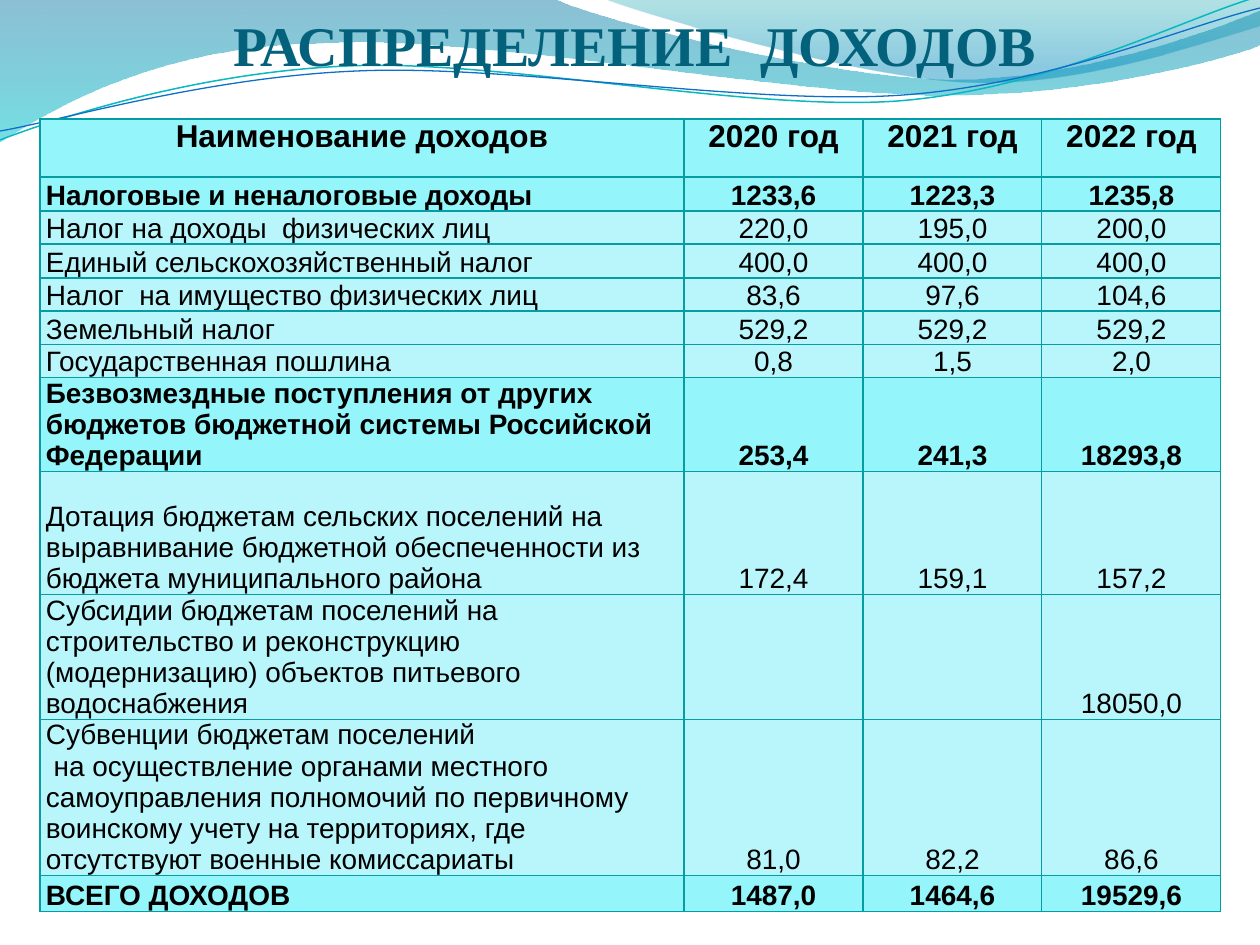
from math import cos, radians, sin

from lxml.etree import SubElement
from pptx import Presentation
from pptx.dml.color import RGBColor
from pptx.enum.text import MSO_ANCHOR, PP_ALIGN
from pptx.oxml.ns import qn
from pptx.util import Emu, Pt

TEAL_DARK = RGBColor(0x04, 0x61, 0x7B)
BLACK = RGBColor(0x00, 0x00, 0x00)
BORDER = RGBColor(0x06, 0x9C, 0xA3)
ROW_STRONG = RGBColor(0x94, 0xF5, 0xFA)
ROW_LIGHT = RGBColor(0xB9, 0xF6, 0xFB)
WAVE_BLUE = RGBColor(0x00, 0x74, 0xA1)
WAVE_CYAN = RGBColor(0x00, 0xC6, 0xCF)
WAVE_TEAL = RGBColor(0x00, 0xA1, 0xA9)
WAVE_SKY = RGBColor(0x00, 0x8B, 0xBF)
LINE_TEAL = RGBColor(0x0A, 0xB8, 0xBF)
LINE_BLUE = RGBColor(0x0F, 0x6F, 0xC6)

# Outlines in px: two numbers are a corner, six are a Bezier segment
LEFT_WAVE = [
    (0, 0), (554, -1), (600, 21, 837, 79, 955, 79), (1075, 79, 1207, 33, 1260, 11),
    (1261, 45), (1239, 55, 1096, 96, 940, 95), (784, 95, 481, 35, 324, 43),
    (163, 45, 58, 105, -1, 142)]
RIGHT_WAVE = [
    (604, -1), (641, 14, 859, 78, 969, 82), (1079, 87, 1211, 40, 1260, 26), (1260, 0)]
TEAL_CURVE = [
    (0, 140), (60, 117, 199, 72, 349, 66), (498, 59, 747, 112, 898, 101),
    (1050, 89, 1182, 19, 1257, -3)]
BLUE_CURVE = [
    (0, 131), (59, 121, 207, 77, 357, 71), (508, 64, 752, 106, 903, 95),
    (1053, 84, 1185, 26, 1260, 8)]
CURVE_TILT = -2.7
CURVE_CENTRE = (629, 73)

COLUMNS = [644, 179, 179, 179]
HEIGHTS = [58] + [34, 33] * 3 + [94, 123, 123, 156, 36]
STRONG_ROWS = {0, 1, 7, 11}
INCOME = [
    ("Наименование доходов", "2020 год", "2021 год", "2022 год"),
    ("Налоговые и неналоговые доходы", "1233,6", "1223,3", "1235,8"),
    ("Налог на доходы  физических лиц", "220,0", "195,0", "200,0"),
    ("Единый сельскохозяйственный налог", "400,0", "400,0", "400,0"),
    ("Налог  на имущество физических лиц", "83,6", "97,6", "104,6"),
    ("Земельный налог", "529,2", "529,2", "529,2"),
    ("Государственная пошлина", "0,8", "1,5", "2,0"),
    ("Безвозмездные поступления от других  бюджетов бюджетной системы "
     "Российской Федерации", "253,4", "241,3", "18293,8"),
    ("Дотация бюджетам сельских поселений на выравнивание бюджетной "
     "обеспеченности из бюджета муниципального района", "172,4", "159,1", "157,2"),
    ("Субсидии бюджетам поселений на строительство и реконструкцию "
     "(модернизацию) объектов питьевого водоснабжения", "", "", "18050,0"),
    ("Субвенции бюджетам поселений\n на осуществление органами местного "
     "самоуправления полномочий по первичному воинскому учету на территориях, "
     "где отсутствуют военные комиссариаты", "81,0", "82,2", "86,6"),
    ("ВСЕГО ДОХОДОВ", "1487,0", "1464,6", "19529,6"),
]


def px(n):
    return Emu(round(n * 914400 / 126))


def write_text(tf, text, size=16, font="Arial", color=BLACK, bold=False,
               align=PP_ALIGN.LEFT):
    for i, line in enumerate(text.split("\n")):
        p = tf.add_paragraph() if i else tf.paragraphs[0]
        p.alignment = align
        r = p.add_run()
        r.text = line
        r.font.size = Pt(size)
        r.font.name = font
        r.font.bold = bold
        r.font.color.rgb = color


def turn(segment, degrees):
    a, (cx, cy) = radians(degrees), CURVE_CENTRE
    turned = []
    for x, y in zip(segment[::2], segment[1::2]):
        turned += [cx + (x - cx) * cos(a) - (y - cy) * sin(a),
                   cy + (x - cx) * sin(a) + (y - cy) * cos(a)]
    return turned


class SlideBuilder:
    def __init__(self, slide):
        self.slide = slide

    def outline(self, segments, close):
        ends = [(px(seg[-2]), px(seg[-1])) for seg in segments]
        builder = self.slide.shapes.build_freeform(*ends[0])
        builder.add_line_segments(ends[1:], close=close)
        sp = builder.convert_to_shape()
        sp.shadow.inherit = False
        # Turn straight segments into Bezier segments
        lines = list(sp._element.iter(qn("a:lnTo")))
        for line, seg in zip(lines, segments[1:]):
            if len(seg) == 6:
                line.tag = qn("a:cubicBezTo")
                line.clear()
                for x, y in zip(seg[::2], seg[1::2]):
                    SubElement(line, qn("a:pt"), x=str(px(x) - sp.left),
                               y=str(px(y) - sp.top))
        return sp

    def wave(self, segments, *stops):
        sp = self.outline(segments, True)
        sp.line.fill.background()
        sp.fill.gradient()
        sp.fill.gradient_angle = 270
        for stop, (position, color, opacity) in zip(sp.fill.gradient_stops, stops):
            stop.position = position
            stop.color.rgb = color
        for clr, (_, _, opacity) in zip(sp._element.spPr.iter(qn("a:srgbClr")), stops):
            SubElement(clr, qn("a:alpha"), val=str(opacity * 1000))

    def curve(self, segments, color, width):
        sp = self.outline([turn(seg, -CURVE_TILT) for seg in segments], False)
        sp.rotation = CURVE_TILT
        sp.fill.background()
        sp.line.color.rgb = color
        sp.line.width = Pt(width)

    def title(self, text, x, y, w, h):
        sp = self.slide.shapes.title
        sp.left, sp.top, sp.width, sp.height = px(x), px(y), px(w), px(h)
        tf = sp.text_frame
        tf.word_wrap = True
        tf.vertical_anchor = MSO_ANCHOR.BOTTOM
        tf.margin_left = tf.margin_right = tf.margin_bottom = 0
        tf.margin_top = px(6)
        write_text(tf, text, size=32, font="Times New Roman", color=TEAL_DARK,
                   bold=True, align=PP_ALIGN.CENTER)
        # Bring the title in front of the waves
        self.slide.shapes._spTree.append(sp._element)

    def cell(self, cell, text, fill, anchor, **fmt):
        cell.margin_left = cell.margin_right = px(6)
        cell.margin_top = cell.margin_bottom = 0
        cell.vertical_anchor = anchor
        tc_pr = cell._tc.get_or_add_tcPr()
        for side in ("a:lnL", "a:lnR", "a:lnT", "a:lnB"):
            ln = SubElement(tc_pr, qn(side), w=str(Pt(0.75)))
            solid = SubElement(ln, qn("a:solidFill"))
            SubElement(solid, qn("a:srgbClr"), val=str(BORDER))
        cell.fill.solid()
        cell.fill.fore_color.rgb = fill
        if text:
            write_text(cell.text_frame, text, **fmt)

    def table(self, rows, x, y):
        frame = self.slide.shapes.add_table(
            len(rows), len(COLUMNS), px(x), px(y), px(sum(COLUMNS)), px(sum(HEIGHTS)))
        table = frame.table
        table.first_row = table.horz_banding = False
        for column, width in zip(table.columns, COLUMNS):
            column.width = px(width)
        for i, (row, height) in enumerate(zip(rows, HEIGHTS)):
            table.rows[i].height = px(height)
            strong, header = i in STRONG_ROWS, i == 0
            for j, text in enumerate(row):
                self.cell(table.cell(i, j), text,
                          ROW_STRONG if strong else ROW_LIGHT,
                          MSO_ANCHOR.TOP if header else MSO_ANCHOR.BOTTOM,
                          size=18 if header else 16, bold=strong,
                          align=PP_ALIGN.CENTER if header or j else PP_ALIGN.LEFT)


def main():
    prs = Presentation()
    prs.slide_width, prs.slide_height = px(1260), px(945)
    page = SlideBuilder(prs.slides.add_slide(prs.slide_layouts[5]))

    # Wave background
    page.wave(LEFT_WAVE, (0, WAVE_BLUE, 45), (1, WAVE_CYAN, 55))
    page.wave(RIGHT_WAVE, (0, WAVE_TEAL, 30), (0.8, WAVE_SKY, 45))
    page.curve(TEAL_CURVE, LINE_TEAL, 0.85)
    page.curve(BLUE_CURVE, LINE_BLUE, 0.75)

    # Title and income table
    page.title("РАСПРЕДЕЛЕНИЕ  ДОХОДОВ", 63, 29, 1144, 49)
    page.table(INCOME, 40, 119)

    prs.save("out.pptx")


if __name__ == "__main__":
    main()
